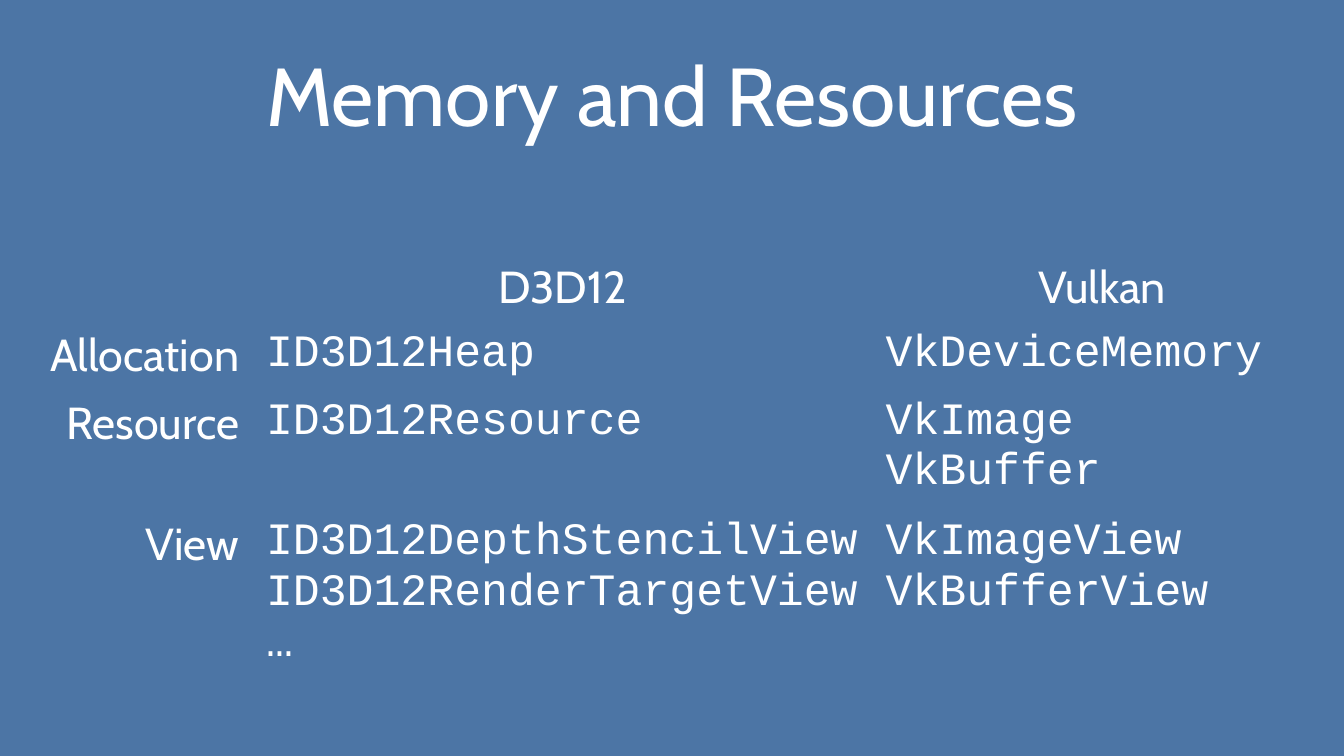
from pptx import Presentation
from pptx.dml.color import RGBColor
from pptx.enum.text import MSO_ANCHOR, PP_ALIGN
from pptx.oxml.ns import qn
from pptx.util import Inches, Pt

BLUE = RGBColor(0x4C, 0x75, 0xA5)
WHITE = RGBColor(0xFF, 0xFF, 0xFF)
HEADING_FONT = "Cabin"
CODE_FONT = "Courier New"
NO_GRID_STYLE = "{2D5ABB26-0587-4C30-8999-92F81FD0307C}"


def add_text(paragraph, text, size, font, align):
    paragraph.alignment = align
    run = paragraph.add_run()
    run.text = text
    run.font.size = Pt(size)
    run.font.name = font
    run.font.color.rgb = WHITE


prs = Presentation()
prs.slide_width = Inches(10)
prs.slide_height = Inches(10) * 9 // 16
slide = prs.slides.add_slide(prs.slide_layouts[5])
slide.background.fill.solid()
slide.background.fill.fore_color.rgb = BLUE

title = slide.shapes.title
title.left, title.top = Inches(0.5), Inches(0.23)
title.width, title.height = Inches(9), Inches(0.94)
title.text_frame.vertical_anchor = MSO_ANCHOR.MIDDLE
add_text(title.text_frame.paragraphs[0], "Memory and Resources", 44,
         HEADING_FONT, PP_ALIGN.CENTER)

api_rows = [
    [[], ["D3D12"], ["Vulkan"]],
    [["Allocation"], ["ID3D12Heap"], ["VkDeviceMemory"]],
    [["Resource"], ["ID3D12Resource"], ["VkImage", "VkBuffer"]],
    [["View"],
     ["ID3D12DepthStencilView", "ID3D12RenderTargetView", "…"],
     ["VkImageView", "VkBufferView"]],
]
column_widths = [1.62, 4.61, 3.42]
row_heights = [0.5, 0.5, 0.9, 1.3]

comparison = slide.shapes.add_table(
    len(row_heights), len(column_widths), Inches(0.26), Inches(1.89),
    Inches(sum(column_widths)), Inches(sum(row_heights))).table
comparison.first_row = False
comparison.horz_banding = False
comparison._tbl.tblPr.find(qn("a:tableStyleId")).text = NO_GRID_STYLE
for column, width in zip(comparison.columns, column_widths):
    column.width = Inches(width)
for row, height in zip(comparison.rows, row_heights):
    row.height = Inches(height)

for r, api_row in enumerate(api_rows):
    for c, lines in enumerate(api_row):
        cell = comparison.cell(r, c)
        cell.fill.background()
        if r == 0:
            font, align = HEADING_FONT, PP_ALIGN.CENTER
        elif c == 0:
            font, align = HEADING_FONT, PP_ALIGN.RIGHT
        else:
            font, align = CODE_FONT, PP_ALIGN.LEFT
        frame = cell.text_frame
        for i, line in enumerate(lines):
            paragraph = frame.add_paragraph() if i else frame.paragraphs[0]
            add_text(paragraph, line, 24, font, align)

prs.save("out.pptx")
